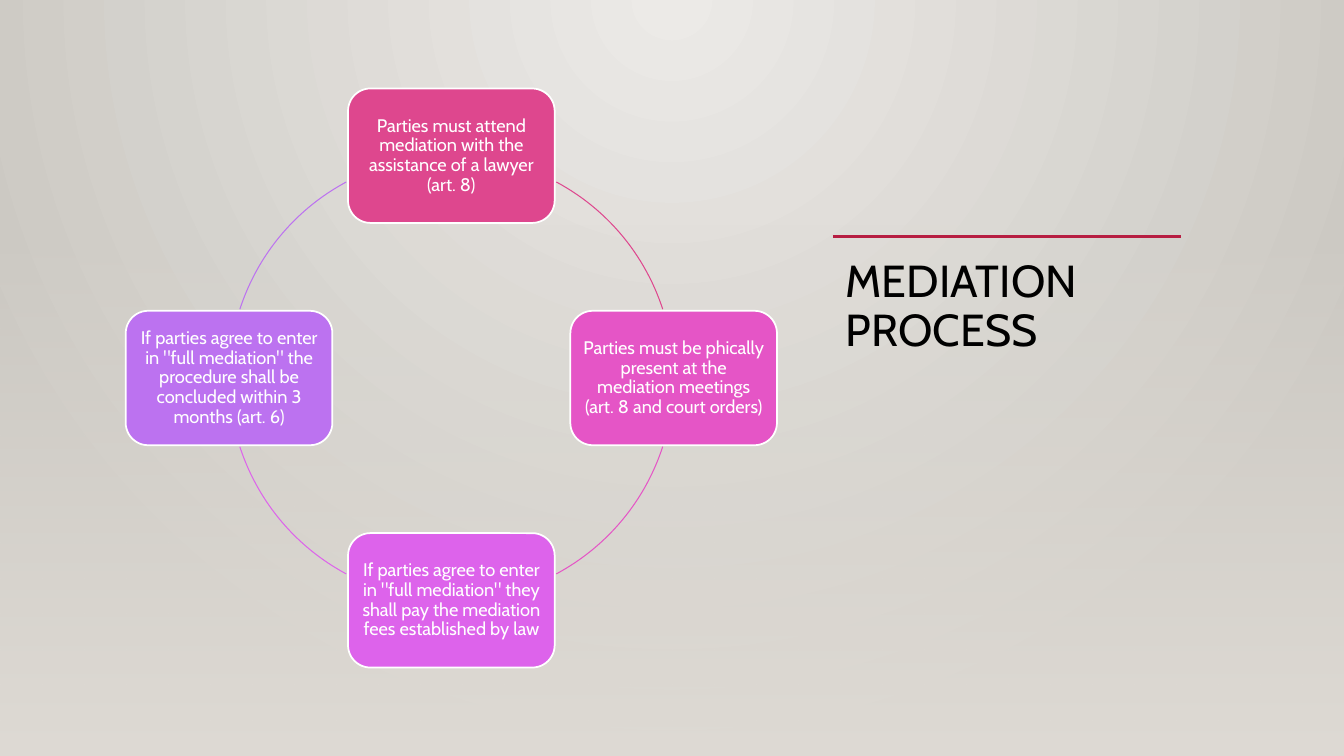
from lxml import etree
from pptx import Presentation
from pptx import util as u
from pptx.dml.color import RGBColor
from pptx.enum import shapes, text
from pptx.oxml.ns import qn

COLORS = {
    "light": "ECEAE7", "shade": "CAC7C1", "veil": "DFDBD5", "accent": "B71E42",
    "black": "000000", "white": "FFFFFF",
    "lawyer": "DE478E", "presence": "E555C6", "fees": "DD63EB", "deadline": "BC72F0",
}
WIDTH, HEIGHT = 960, 540
CENTER_X, CENTER_Y, RADIUS = 322.4, 270, 158.8
BOX_WIDTH, BOX_HEIGHT = 147.6, 96
# Angles hidden by the boxes, measured from the middle of each box
GAP_VERTICAL, GAP_SIDE = 28.2, 18

# Colour, direction from the centre, text; clockwise from the top
STEPS = [
    ("lawyer", (0, -1),
     "Parties must attend mediation with the assistance of a lawyer (art. 8)"),
    ("presence", (1, 0),
     "Parties must be phically present at the mediation meetings (art. 8 and court orders)"),
    ("fees", (0, 1),
     'If parties agree to enter in "full mediation" they shall pay the mediation '
     'fees established by law'),
    ("deadline", (-1, 0),
     'If parties agree to enter in "full mediation" the procedure shall be '
     'concluded within 3 months (art. 6)'),
]


def rgb(name):
    return RGBColor.from_string(COLORS[name])


class SlideBuilder:
    font = "Cabin"

    def __init__(self, slide):
        self.slide = slide

    def shape(self, kind, left, top, width, height):
        shape = self.slide.shapes.add_shape(
            kind, u.Pt(left), u.Pt(top), u.Pt(width), u.Pt(height))
        shape.shadow.inherit = False
        return shape

    def outline(self, shape, color, width):
        shape.line.color.rgb = rgb(color)
        shape.line.width = u.Pt(width)

    def gradient(self, top, height, first, last):
        shape = self.shape(shapes.MSO_SHAPE.RECTANGLE, 0, top, WIDTH, height)
        shape.line.fill.background()
        shape.fill.gradient()
        shape.fill.gradient_angle = 270
        for stop, color, position in zip(shape.fill.gradient_stops, (first, last), (0, 1)):
            stop.color.rgb = rgb(color)
            stop.position = position
        return shape._element.spPr.find(qn("a:gradFill"))

    def glow(self, first, last):
        gradient = self.gradient(0, HEIGHT, first, last)
        gradient.remove(gradient.find(qn("a:lin")))
        circle = etree.SubElement(gradient, qn("a:path"), {"path": "circle"})
        etree.SubElement(circle, qn("a:fillToRect"),
                         {"l": "43000", "t": "0", "r": "43000", "b": "100000"})

    def veil(self, top, color):
        gradient = self.gradient(top, HEIGHT - top, color, color)
        first_color = gradient.find(".//" + qn("a:srgbClr"))
        etree.SubElement(first_color, qn("a:alpha"), {"val": "0"})

    def label(self, shape, words, size, color, align, frame_format):
        frame = shape.text_frame
        for name, value in {"word_wrap": True, **frame_format}.items():
            setattr(frame, name, value)
        paragraph = frame.paragraphs[0]
        paragraph.text = words
        for name, value in {"alignment": align, "line_spacing": 0.9}.items():
            setattr(paragraph, name, value)
        for name, value in {"name": self.font, "size": u.Pt(size)}.items():
            setattr(paragraph.font, name, value)
        paragraph.font.color.rgb = rgb(color)

    def title(self, words, left, top, width, height):
        box = self.slide.shapes.add_textbox(
            u.Pt(left), u.Pt(top), u.Pt(width), u.Pt(height))
        self.label(box, words, 32, "black", text.PP_ALIGN.LEFT,
                   {"vertical_anchor": text.MSO_ANCHOR.TOP})

    def rule(self, left, right, y, color, width):
        line = self.slide.shapes.add_connector(
            shapes.MSO_CONNECTOR.STRAIGHT, u.Pt(left), u.Pt(y), u.Pt(right), u.Pt(y))
        self.outline(line, color, width)
        etree.SubElement(line._element.spPr, qn("a:effectLst"))

    def step(self, words, color, x, y):
        box = self.shape(shapes.MSO_SHAPE.ROUNDED_RECTANGLE,
                         x - BOX_WIDTH / 2, y - BOX_HEIGHT / 2, BOX_WIDTH, BOX_HEIGHT)
        box.fill.solid()
        box.fill.fore_color.rgb = rgb(color)
        self.outline(box, "white", 1.25)
        margins = {f"margin_{side}": u.Pt(3.6) for side in ("left", "top", "right", "bottom")}
        self.label(box, words, 13, "white", text.PP_ALIGN.CENTER,
                   {"vertical_anchor": text.MSO_ANCHOR.MIDDLE, **margins})

    def arc(self, color, start, end):
        arc = self.shape(shapes.MSO_SHAPE.ARC, CENTER_X - RADIUS, CENTER_Y - RADIUS,
                         2 * RADIUS, 2 * RADIUS)
        arc.fill.background()
        self.outline(arc, color, 0.75)
        # An adjustment of 0.6 is one degree
        for index, angle in enumerate((start, end)):
            arc.adjustments[index] = angle % 360 * 0.6


def main():
    presentation = Presentation()
    presentation.slide_width, presentation.slide_height = u.Pt(WIDTH), u.Pt(HEIGHT)
    builder = SlideBuilder(presentation.slides.add_slide(presentation.slide_layouts[6]))

    # Backdrop
    builder.glow("light", "shade")
    builder.veil(159, "veil")

    # Title
    builder.title("MEDIATION PROCESS", 597, 181.5, 248.5, 295)
    builder.rule(595, 843.5, 169, "accent", 2.5)

    # Cycle of steps
    gaps = (GAP_VERTICAL, GAP_SIDE)
    for index, (color, (across, down), words) in enumerate(STEPS):
        builder.step(words, color, CENTER_X + across * RADIUS, CENTER_Y + down * RADIUS)
        direction = 270 + 90 * index
        builder.arc(color, direction + gaps[index % 2],
                    direction + 90 - gaps[(index + 1) % 2])

    presentation.save("out.pptx")


if __name__ == "__main__":
    main()
